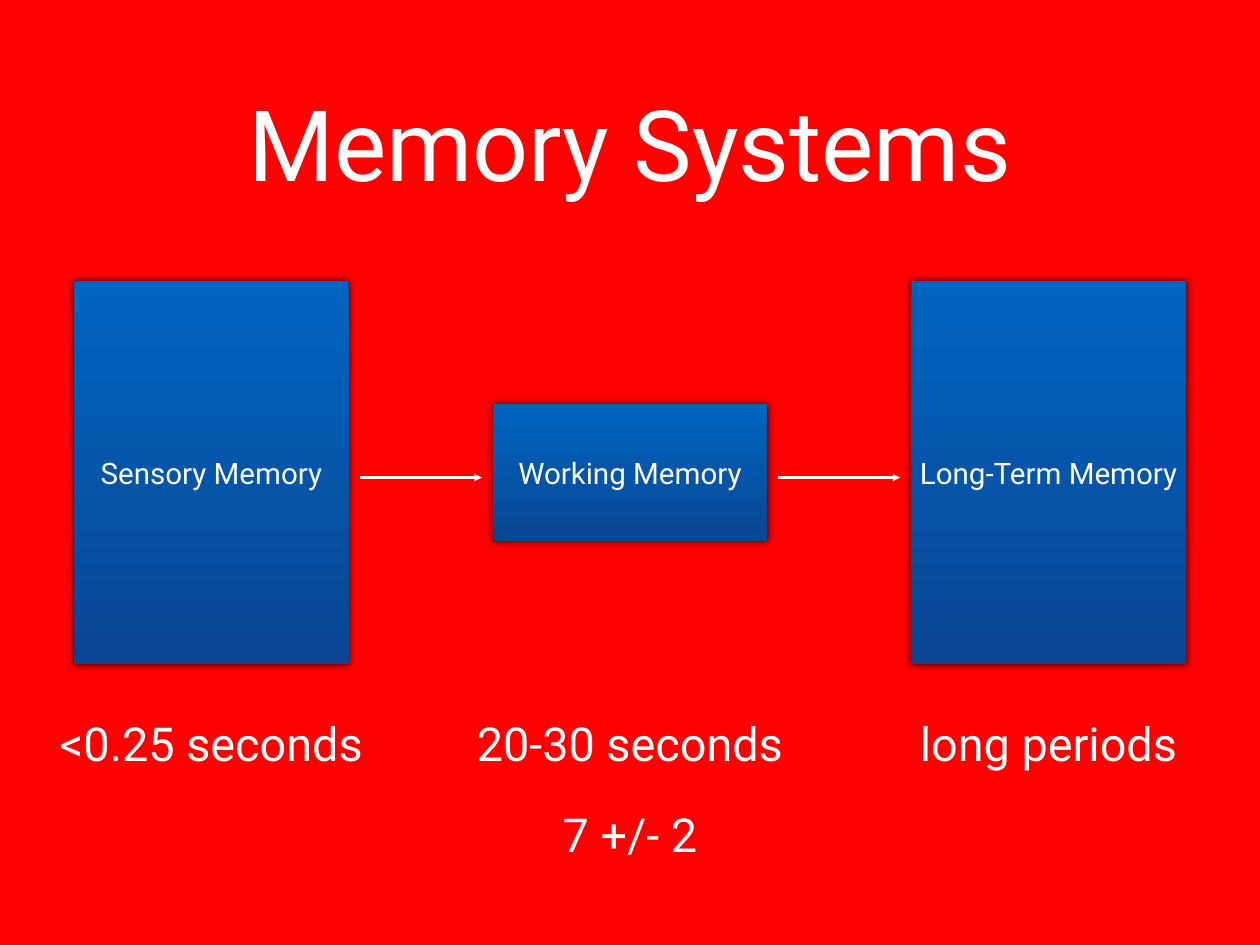
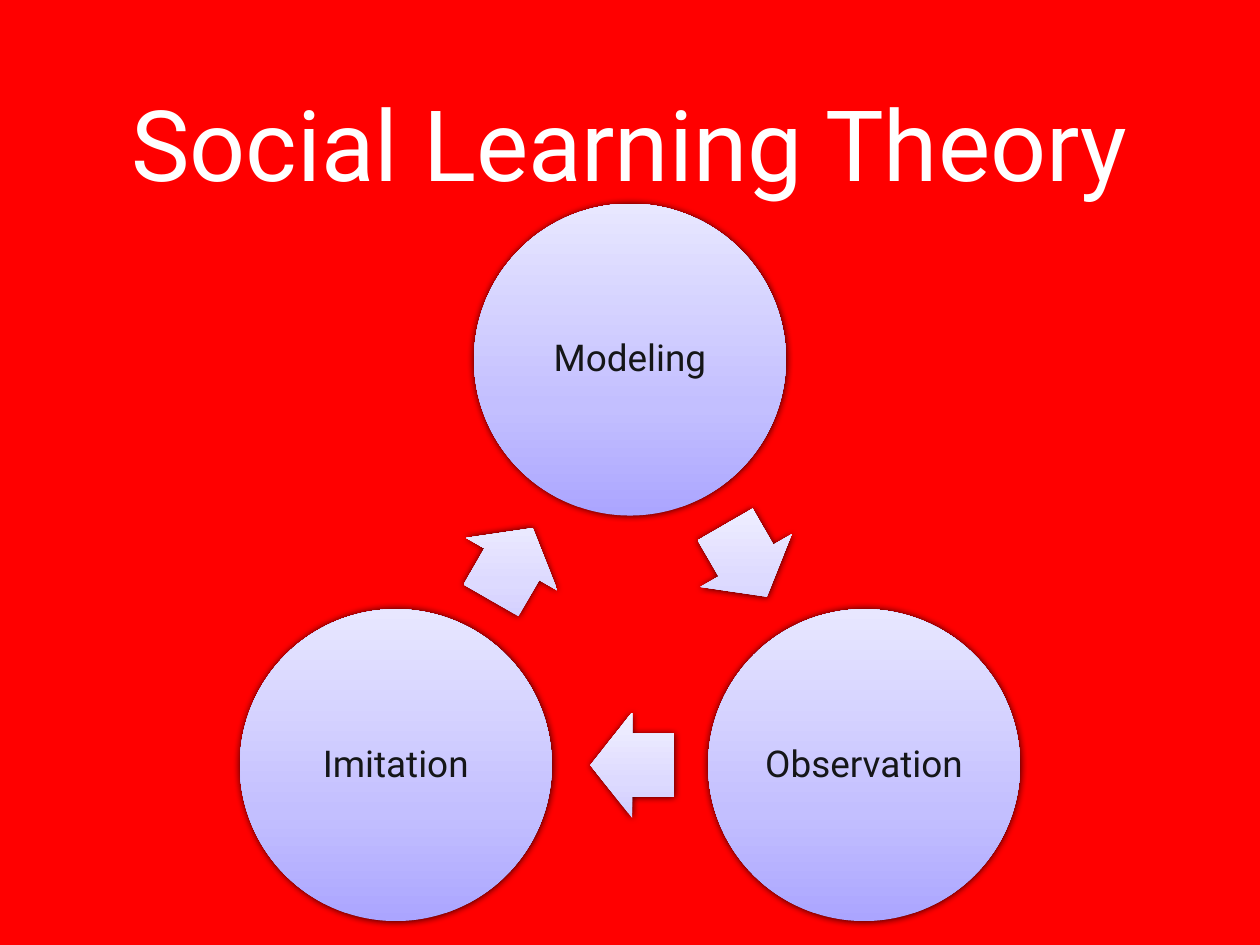
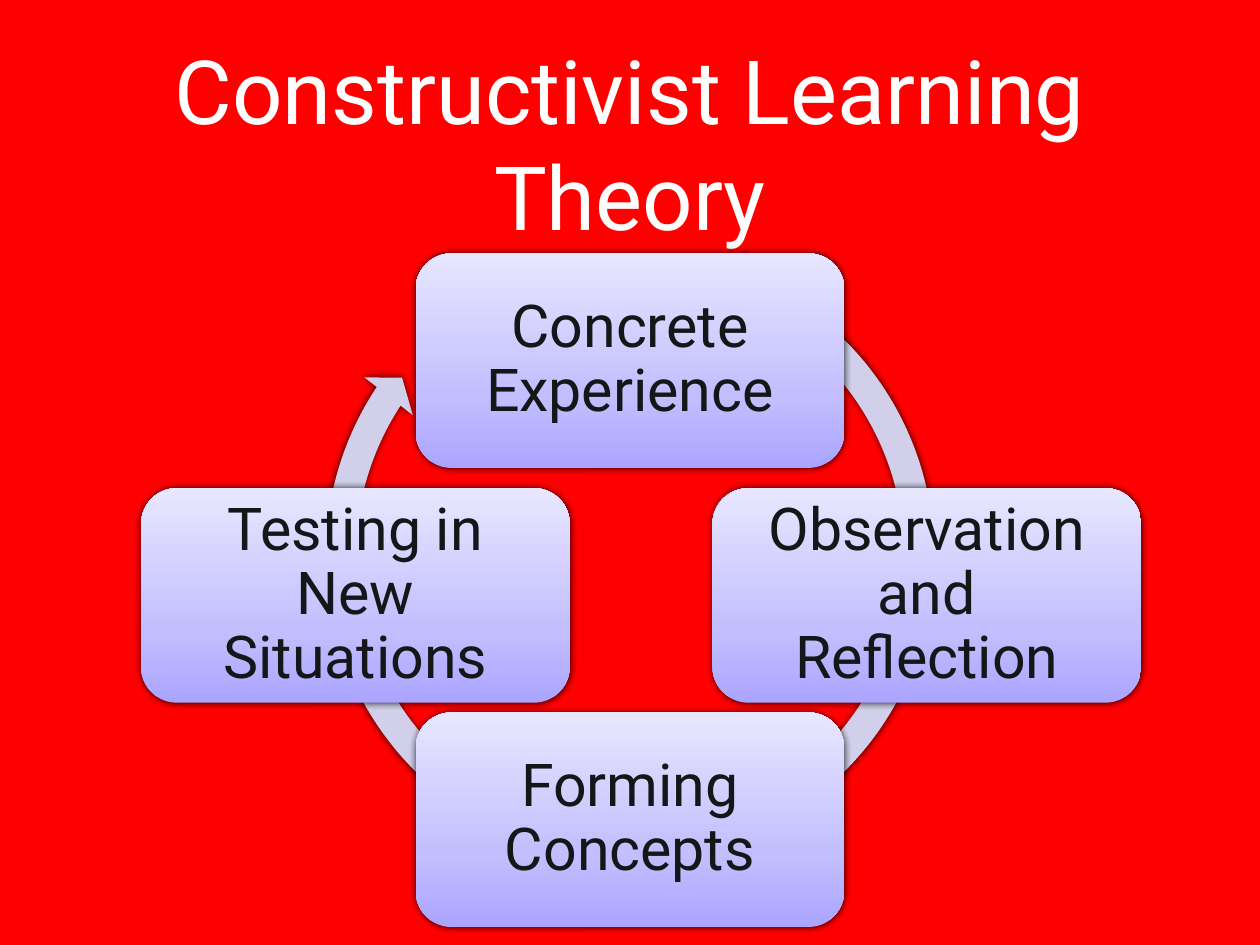
import math
from dataclasses import dataclass
from typing import Any, Sequence

import lxml.etree
import pptx
import pptx.dml.color
import pptx.enum.shapes
import pptx.enum.text
import pptx.oxml.ns
import pptx.util

Cm = pptx.util.Cm
Pt = pptx.util.Pt
SHAPES = pptx.enum.shapes.MSO_SHAPE
qn = pptx.oxml.ns.qn

# Shared style
COLOURS = {
    "page": "FF0000",
    "light": "FFFFFF",
    "dark": "151618",
    "shadow": "000000",
    "ring": "D1CFE9",
}
FONT = "Roboto"
PAGE_WIDTH, PAGE_HEIGHT = 36.12, 27.09
MIDDLE = PAGE_WIDTH / 2
INSET = 0.15


@dataclass(frozen=True)
class Gradient:
    stops: Sequence[tuple[int, str]]  # percent, hex
    angle: int  # clockwise degrees


@dataclass(frozen=True)
class TextStyle:
    size: int
    colour: str
    inset: float = INSET
    line_spacing: float = 1.0


@dataclass(frozen=True)
class Memory:
    name: str
    height: float
    duration: str
    label_width: float


@dataclass(frozen=True)
class Card:
    name: str
    x: float
    y: float


BLUE = Gradient(((0, "0065C1"), (100, "094593")), 90)
LILAC = Gradient(((0, "ABA5FF"), (35, "C3BFFF"), (100, "E8E7FF")), 270)
PALE = Gradient(((0, "D0CCFF"), (35, "DDDAFF"), (100, "F2F1FF")), 270)

BOX_TEXT = TextStyle(24, "light")
LABEL_TEXT = TextStyle(38, "light")
CIRCLE_TEXT = TextStyle(30, "dark", 0.1, 0.9)
CARD_TEXT = TextStyle(48, "dark", 0.5, 0.9)


def rgb(name: str) -> pptx.dml.color.RGBColor:
    return pptx.dml.color.RGBColor.from_string(COLOURS[name])


def write(shape: Any, text: str, style: TextStyle) -> None:
    """Put one centred paragraph into a shape."""
    frame = shape.text_frame
    frame.text = text
    frame.word_wrap = True
    frame.vertical_anchor = pptx.enum.text.MSO_ANCHOR.MIDDLE
    frame.margin_left = frame.margin_right = Cm(style.inset)
    frame.margin_top = frame.margin_bottom = Cm(style.inset)
    para = frame.paragraphs[0]
    para.alignment = pptx.enum.text.PP_ALIGN.CENTER
    para.line_spacing = style.line_spacing
    para.font.name = FONT
    para.font.size = Pt(style.size)
    para.font.color.rgb = rgb(style.colour)


def fill_gradient(shape: Any, gradient: Gradient) -> None:
    shape.fill.gradient()
    shape.fill.gradient_angle = -gradient.angle % 360
    element = shape._element.spPr.find(qn("a:gradFill"))
    element.set("rotWithShape", "0")
    stops = element.find(qn("a:gsLst"))
    for stop in list(stops):
        stops.remove(stop)
    for percent, colour in gradient.stops:
        stop = lxml.etree.SubElement(stops, qn("a:gs"), pos=str(percent * 1000))
        lxml.etree.SubElement(stop, qn("a:srgbClr"), val=colour)


def add_soft_shadow(shape: Any) -> None:
    shape.shadow.inherit = False
    effects = shape._element.spPr.find(qn("a:effectLst"))
    shadow = lxml.etree.SubElement(
        effects, qn("a:outerShdw"), blurRad=str(int(Pt(6))), dist="0",
        dir=str(315 * 60000), rotWithShape="0")
    colour = lxml.etree.SubElement(shadow, qn("a:srgbClr"), val=COLOURS["shadow"])
    lxml.etree.SubElement(colour, qn("a:alpha"), val="80000")


def add_figure(page: Any, kind: Any, x: float, y: float, width: float,
               height: float) -> Any:
    """Add a shadowed shape without outline, centred on x and y."""
    shape = page.shapes.add_shape(
        kind, Cm(x - width / 2), Cm(y - height / 2), Cm(width), Cm(height))
    shape.line.fill.background()
    add_soft_shadow(shape)
    return shape


def add_label(page: Any, text: str, x: float, top: float, width: float) -> None:
    box = page.shapes.add_textbox(Cm(x - width / 2), Cm(top), Cm(width), Cm(1.9))
    write(box, text, LABEL_TEXT)
    box.text_frame.word_wrap = False
    box.text_frame.auto_size = pptx.enum.text.MSO_AUTO_SIZE.SHAPE_TO_FIT_TEXT


def add_arrow(page: Any, start: float, end: float, y: float) -> None:
    arrow = page.shapes.add_connector(
        pptx.enum.shapes.MSO_CONNECTOR.STRAIGHT, Cm(start), Cm(y), Cm(end), Cm(y))
    arrow.line.width = Pt(2)
    arrow.line.color.rgb = rgb("light")
    properties = arrow._element.spPr
    lxml.etree.SubElement(
        properties.find(qn("a:ln")), qn("a:tailEnd"), type="triangle")
    lxml.etree.SubElement(properties, qn("a:effectLst"))


def add_page(deck: Any, title: str, size: int = 80) -> Any:
    page = deck.slides.add_slide(deck.slide_layouts.get_by_name("Title Only"))
    box = page.shapes.title
    box.left, box.top = Cm(2.64), Cm(1.12)
    box.width, box.height = Cm(30.84), Cm(5.89)
    write(box, title, TextStyle(size, "light"))
    box.text_frame.auto_size = pptx.enum.text.MSO_AUTO_SIZE.NONE
    return page


def build_memory_systems(deck: Any) -> None:
    page = add_page(deck, "Memory Systems")
    pitch, box_width, centre_y, label_top = 12, 7.87, 13.55, 20.35
    memories = (
        Memory("Sensory Memory", 11, "<0.25 seconds", 9.32),
        Memory("Working Memory", 3.94, "20-30 seconds", 9.27),
        Memory("Long-Term Memory", 11, "long periods", 7.85),
    )
    for index, memory in enumerate(memories):
        x = MIDDLE + (index - 1) * pitch
        box = add_figure(page, SHAPES.RECTANGLE, x, centre_y, box_width, memory.height)
        fill_gradient(box, BLUE)
        write(box, memory.name, BOX_TEXT)
        add_label(page, memory.duration, x, label_top, memory.label_width)
    add_label(page, "7 +/- 2", MIDDLE, 22.96, 4.27)

    # Arrows in the middle of the gaps
    for gap_x in (MIDDLE - pitch / 2, MIDDLE + pitch / 2):
        add_arrow(page, gap_x - 1.75, gap_x + 1.75, 13.69)


def build_social_learning(deck: Any) -> None:
    page = add_page(deck, "Social Learning Theory")
    centre_y, radius, diameter = 18.06, 7.75, 8.94
    setback = 0.06  # arrows sit slightly behind the midpoint
    names = ("Modeling", "Observation", "Imitation")
    for index, name in enumerate(names):
        turn = math.radians(-90 + 120 * index)
        circle = add_figure(
            page, SHAPES.OVAL, MIDDLE + radius * math.cos(turn),
            centre_y + radius * math.sin(turn), diameter, diameter)
        fill_gradient(circle, LILAC)
        write(circle, name, CIRCLE_TEXT)

        # Arrow halfway to the next circle
        halfway = turn + math.radians(60)
        heading = 60 + 120 * index
        direction = math.radians(heading)
        arrow = add_figure(
            page, SHAPES.RIGHT_ARROW,
            MIDDLE + radius / 2 * math.cos(halfway) - setback * math.cos(direction),
            centre_y + radius / 2 * math.sin(halfway) - setback * math.sin(direction),
            2.39, 3.02)
        arrow.adjustments[0], arrow.adjustments[1] = 0.6, 0.5
        arrow.rotation = heading
        fill_gradient(arrow, PALE)


def build_constructivist_learning(deck: Any) -> None:
    page = add_page(deck, "Constructivist Learning Theory", 72)

    # Ring arrow behind the cards; its angles are in degrees
    ring = add_figure(page, SHAPES.CIRCULAR_ARROW, MIDDLE, 15.93, 18.34, 18.34)
    degree = 0.6
    settings = (4.7 / 100, 4.55 * degree, 213.44 * degree, 300.8 * degree, 4.8 / 100)
    for index, value in enumerate(settings):
        ring.adjustments[index] = value
    ring.fill.solid()
    ring.fill.fore_color.rgb = rgb("ring")

    cards = (
        Card("Concrete Experience", MIDDLE, 10.34),
        Card("Observation and Reflection", 26.57, 17.07),
        Card("Forming Concepts", MIDDLE, 23.5),
        Card("Testing in New Situations", 10.19, 17.07),
    )
    for card in cards:
        shape = add_figure(
            page, SHAPES.ROUNDED_RECTANGLE, card.x, card.y, 12.29, 6.15)
        fill_gradient(shape, LILAC)
        write(shape, card.name, CARD_TEXT)


def main() -> None:
    deck = pptx.Presentation()
    deck.slide_width, deck.slide_height = Cm(PAGE_WIDTH), Cm(PAGE_HEIGHT)
    background = deck.slide_master.background.fill
    background.solid()
    background.fore_color.rgb = rgb("page")
    build_memory_systems(deck)
    build_social_learning(deck)
    build_constructivist_learning(deck)
    deck.save("out.pptx")


if __name__ == "__main__":
    main()
